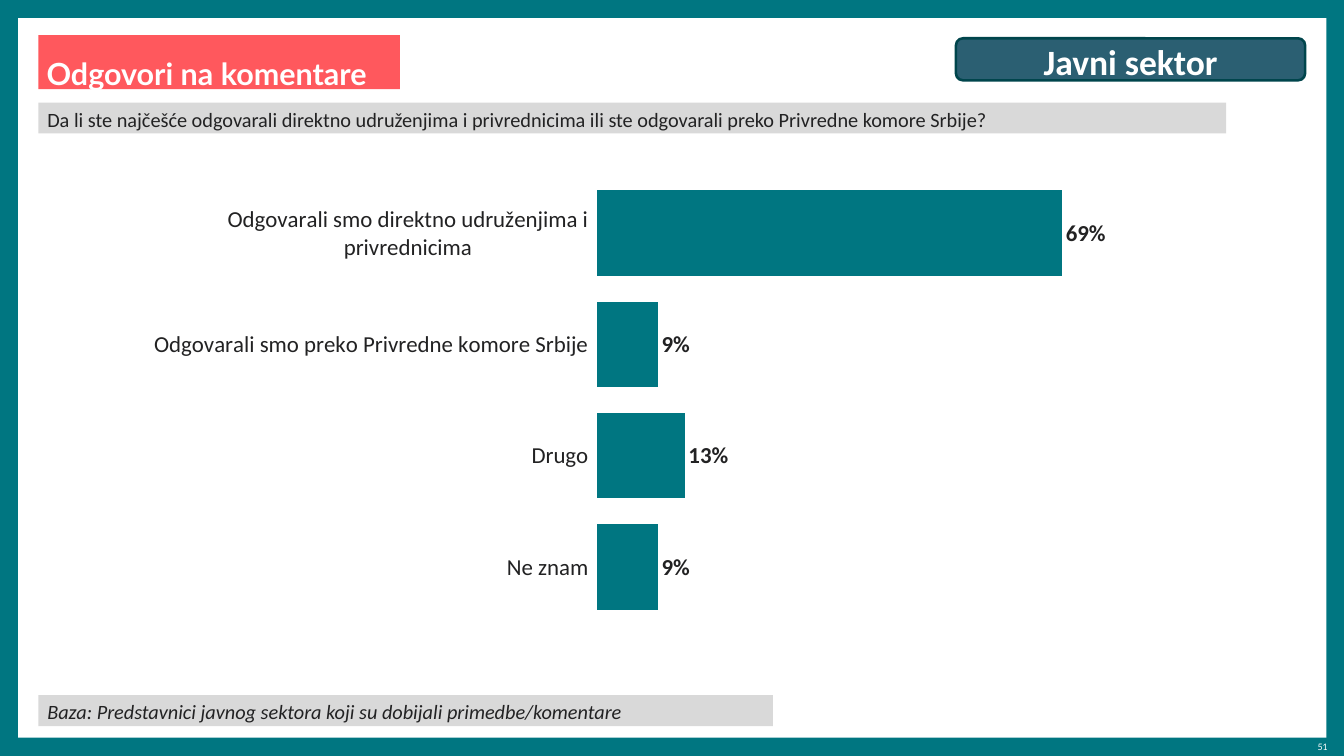
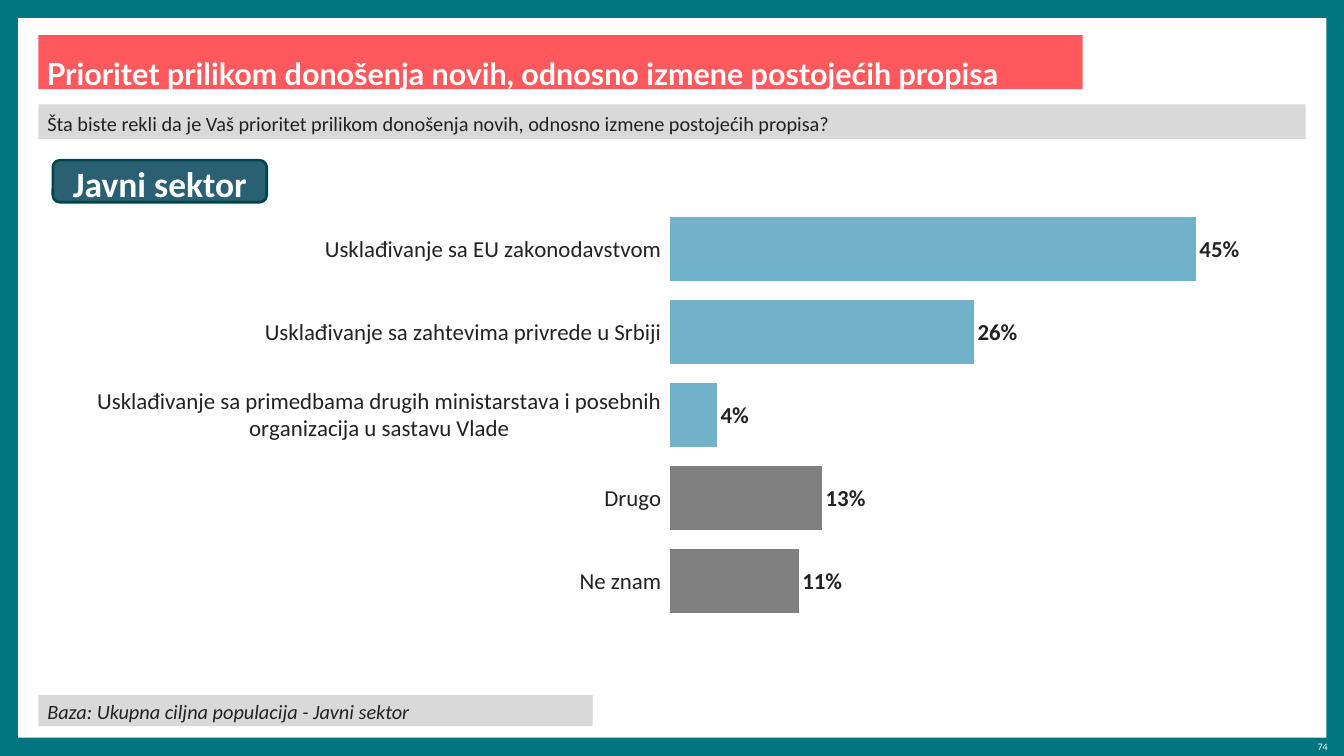
"""Build two survey result slides with a shared frame, title band and bar chart."""
from pptx import Presentation
from pptx.chart.data import CategoryChartData
from pptx.dml.color import RGBColor
from pptx.enum.chart import XL_CHART_TYPE, XL_LABEL_POSITION
from pptx.enum.shapes import MSO_SHAPE
from pptx.enum.text import MSO_ANCHOR, MSO_AUTO_SIZE, PP_ALIGN
from pptx.oxml import parse_xml
from pptx.oxml.ns import nsdecls, qn
from pptx.util import Pt

BAR = XL_CHART_TYPE.BAR_CLUSTERED
OUTSIDE_END = XL_LABEL_POSITION.OUTSIDE_END
RECTANGLE, ROUNDED = MSO_SHAPE.RECTANGLE, MSO_SHAPE.ROUNDED_RECTANGLE
MIDDLE, FIXED_SIZE = MSO_ANCHOR.MIDDLE, MSO_AUTO_SIZE.NONE
LEFT, CENTER, RIGHT = PP_ALIGN.LEFT, PP_ALIGN.CENTER, PP_ALIGN.RIGHT


class Theme:
    teal = RGBColor.from_string("007681")
    sky = RGBColor.from_string("71B2C9")
    gray = RGBColor.from_string("808080")
    coral = RGBColor.from_string("FF585D")
    band = RGBColor.from_string("D9D9D9")
    badge = RGBColor.from_string("2B5F72")
    badge_line = RGBColor.from_string("00454C")
    ink = RGBColor.from_string("222223")
    white = RGBColor.from_string("FFFFFF")
    heading_font, body_font = "Lato", "Calibri"
    title_size, badge_size, chart_size, band_size, number_size = 24, 28, 18, 16, 7


WIDTH, HEIGHT = 1058.4, 595.44
MARGIN, EDGE = 14.2, 30.2

SLIDES = [
    dict(
        title="Odgovori na komentare", title_width=284.8,
        question="Da li ste najčešće odgovarali direktno udruženjima i privrednicima "
                 "ili ste odgovarali preko Privredne komore Srbije?",
        question_box=(EDGE, 80.8, 935.5, 24.3),
        base="Baza: Predstavnici javnog sektora koji su dobijali primedbe/komentare",
        base_width=578.4,
        badge_box=(752.8, 30.2, 275, 33.1),
        number="51",
        chart_box=(101.5, 138.8, 793.4, 351.6),
        plot=(0.465, 0.003, 0.535, 0.997),
        maximum=80, color=Theme.teal, gray_points=[],
        answers={
            "Odgovarali smo direktno udruženjima i privrednicima": 69,
            "Odgovarali smo preko Privredne komore Srbije": 9,
            "Drugo": 13,
            "Ne znam": 9,
        },
    ),
    dict(
        title="Prioritet prilikom donošenja novih, odnosno izmene postojećih propisa",
        title_width=822.4,
        question="Šta biste rekli da je Vaš prioritet prilikom donošenja novih, "
                 "odnosno izmene postojećih propisa?",
        question_box=(EDGE, 82.3, 998.1, 27.4),
        base="Baza: Ukupna ciljna populacija - Javni sektor",
        base_width=436.5,
        badge_box=(41.6, 126.2, 168.5, 33.1),
        number="74",
        chart_box=(29.5, 163.6, 958.3, 334.1),
        plot=(0.52, 0, 0.48, 0.978),
        maximum=50, color=Theme.sky, gray_points=[3, 4],
        answers={
            "Usklađivanje sa EU zakonodavstvom": 45,
            "Usklađivanje sa zahtevima privrede u Srbiji": 26,
            "Usklađivanje sa primedbama drugih ministarstava i posebnih "
            "organizacija u sastavu Vlade": 4,
            "Drugo": 13,
            "Ne znam": 11,
        },
    ),
]


def write(box, text, size, color, font=Theme.body_font, bold=False, italic=False,
          align=LEFT, insets=(7.2, 0, 7.2, 0), spacing=1.1, before=0, after=0):
    frame = box.text_frame
    frame.word_wrap = True
    frame.auto_size = FIXED_SIZE
    frame.vertical_anchor = MIDDLE
    frame.margin_left, frame.margin_top, frame.margin_right, frame.margin_bottom = map(Pt, insets)
    para = frame.paragraphs[0]
    para.alignment = align
    para.line_spacing = spacing
    para.space_before, para.space_after = Pt(before), Pt(after)
    span = para.add_run()
    span.text = text
    span.font.name, span.font.size = font, Pt(size)
    span.font.bold, span.font.italic = bold, italic
    span.font.color.rgb = color


def add_box(page, kind, bounds, fill, line=None):
    box = page.shapes.add_shape(kind, *map(Pt, bounds))
    box.shadow.inherit = False
    box.fill.solid()
    box.fill.fore_color.rgb = fill
    if line is None:
        box.line.fill.background()
    else:
        box.line.color.rgb = line
        box.line.width = Pt(2)
    return box


deck = Presentation()
deck.slide_width, deck.slide_height = Pt(WIDTH), Pt(HEIGHT)
title_only = deck.slide_layouts[5]

for content in SLIDES:
    page = deck.slides.add_slide(title_only)
    page.background.fill.solid()
    page.background.fill.fore_color.rgb = Theme.teal

    title = page.shapes.title
    panel = add_box(page, RECTANGLE, (MARGIN, MARGIN, 1030.3, 566.8), Theme.white)
    title.element.addprevious(panel.element)

    title.left, title.top = Pt(EDGE), Pt(27.7)
    title.width, title.height = Pt(content["title_width"]), Pt(42.5)
    title.fill.solid()
    title.fill.fore_color.rgb = Theme.coral
    write(title, content["title"], Theme.title_size, Theme.white, Theme.heading_font,
          bold=True, insets=(6.5, 5.8, 6.5, 0), spacing=Pt(41))

    base_box = (EDGE, 547.5, content["base_width"], 24.5)
    for text, bounds, italic in (
        (content["question"], content["question_box"], False),
        (content["base"], base_box, True),
    ):
        band = add_box(page, RECTANGLE, bounds, Theme.band)
        write(band, text, Theme.band_size, Theme.ink, italic=italic, before=6, after=6)

    data = CategoryChartData()
    data.categories = list(content["answers"])
    data.add_series("Series 1", list(content["answers"].values()))
    chart = page.shapes.add_chart(BAR, *map(Pt, content["chart_box"]), data).chart
    chart.has_legend = False
    chart.has_title = False
    chart.font.name, chart.font.size = Theme.body_font, Pt(Theme.chart_size)
    chart.font.color.rgb = Theme.ink

    categories = chart.category_axis
    categories.reverse_order = True
    categories.format.line.fill.background()
    values = chart.value_axis
    values.visible = False
    values.has_major_gridlines = False
    values.minimum_scale, values.maximum_scale = 0, content["maximum"]

    plot = chart.plots[0]
    plot.vary_by_categories = False
    plot.gap_width, plot.overlap = 30, 100
    series = plot.series[0]
    series.format.fill.solid()
    series.format.fill.fore_color.rgb = content["color"]
    for position in content["gray_points"]:
        fill = series.points[position].format.fill
        fill.solid()
        fill.fore_color.rgb = Theme.gray

    labels = series.data_labels
    labels.show_value = True
    labels.position = OUTSIDE_END
    labels.number_format, labels.number_format_is_linked = '#"%"', False
    labels.font.name, labels.font.size = Theme.body_font, Pt(Theme.chart_size)
    labels.font.bold = True
    labels.font.color.rgb = Theme.ink

    plot_area = chart.element.chart.plotArea
    for automatic in plot_area.findall(qn("c:layout")):
        plot_area.remove(automatic)
    sides = "".join(f'<c:{side} val="{share}"/>' for side, share in zip("xywh", content["plot"]))
    plot_area.insert(0, parse_xml(
        f'<c:layout {nsdecls("c")}><c:manualLayout><c:layoutTarget val="inner"/>'
        f'<c:xMode val="edge"/><c:yMode val="edge"/>{sides}</c:manualLayout></c:layout>'))

    badge = add_box(page, ROUNDED, content["badge_box"], Theme.badge, Theme.badge_line)
    write(badge, "Javni sektor", Theme.badge_size, Theme.white, bold=True,
          align=CENTER, insets=(2.9,) * 4, before=24)

    number = page.shapes.add_textbox(Pt(988.8), Pt(583.2), Pt(56.9), Pt(9.4))
    write(number, content["number"], Theme.number_size, Theme.white, Theme.heading_font,
          align=RIGHT, insets=(0,) * 4)

deck.save("out.pptx")
